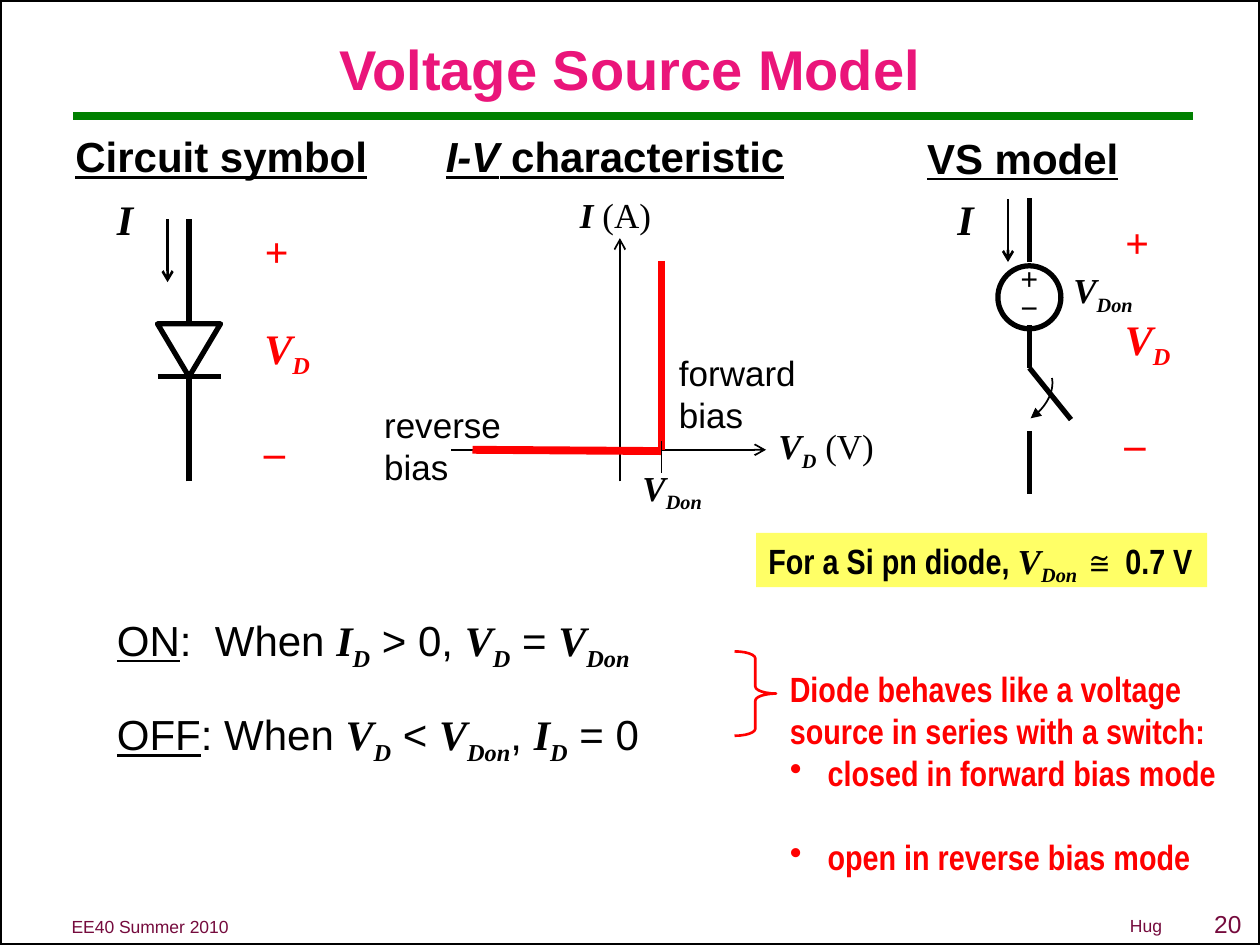
"""Build the voltage source model slide."""
import pptx
import pptx.dml.color
import pptx.enum.shapes
import pptx.enum.text
import pptx.oxml
import pptx.oxml.ns
import pptx.util

Inches, Pt = pptx.util.Inches, pptx.util.Pt
Shape = pptx.enum.shapes.MSO_SHAPE
Align = pptx.enum.text.PP_ALIGN
Anchor = pptx.enum.text.MSO_ANCHOR
Fit = pptx.enum.text.MSO_AUTO_SIZE

THEME = {
    "black": "000000", "red": "FF0000", "green": "008000", "pink": "EA157A",
    "plum": "750B3D", "yellow": "FFFF66",
    "sans": "Arial", "narrow": "Arial Narrow", "serif": "Times New Roman",
    "title": 32, "head": 24, "label": 20, "sign": 18, "page": 14, "foot": 10,
}
MATH = dict(font="serif", bold=True, italic=True)
SUB = dict(MATH, base=-25)
LINE = dict(underline=True)
ROMAN = dict(font="serif")


def sym(name, sub, tail=""):
    return [(name, MATH), (sub + tail, SUB)]


TITLE = "Voltage Source Model"
HEADS = [
    ((0.5, 0.99, 2.52, 0.5), [("Circuit symbol", LINE)]),
    ((3.44, 0.99, 2.89, 0.5), [("I-V", dict(LINE, italic=True)), (" characteristic", LINE)]),
    ((7.26, 1, 1.73, 0.5), [("VS model", LINE)]),
]
BIAS = [((2.95, 3.15, 1.71, 0.43), "reverse bias"), ((5.29, 2.74, 1.71, 0.43), "forward bias")]
MARKS = [
    ((6.08, 3.32, 1, 0.43), sym("V", "D") + [(" (V)", ROMAN)]),
    ((5, 3.65, 1, 0.43), sym("V", "Don")),
    ((8.42, 2.08, 1, 0.43), sym("V", "Don")),
]
AXIS = [("I ", MATH), ("(A)", ROMAN)]
DROP = [[("+", MATH)], sym("V", "D"), [("–", MATH)]]
DROPS = [(2, 1.74, 0.67, 2.1), (8.83, 1.67, 0.58, 2.1)]
FLOWS = [(0.83, 1.49, 0.33, 0.5), (7.5, 1.49, 0.33, 0.5)]
STATES = [
    [("ON", LINE), (":  When ", {}), *sym("I", "D"), (" > 0, ", {}),
     *sym("V", "D"), (" = ", {}), *sym("V", "Don")],
    [("OFF", LINE), (": When ", {}), *sym("V", "D"), (" < ", {}),
     *sym("V", "Don"), (", ", {}), *sym("I", "D"), (" = 0", {})],
]
NOTE = [("For a Si pn diode, ", {}), *sym("V", "Don", " "), ("≅ 0.7 V", {})]
SWITCH = [
    "Diode behaves like a voltage source in series with a switch:",
    "closed in forward bias mode",
    "open in reverse bias mode",
]
FOOT = [((0.47, 7.22, 1.46, 0.27), "EE40 Summer 2010"), ((8.87, 7.21, 0.46, 0.27), "Hug")]
PAGE = "20"

LINES = [
    (0.58, 0.92, 9.47, 0.92, "green", 4.5, None),
    (4.92, 3.82, 4.92, 1.89, "black", 1, "arrow"),
    (3.58, 3.57, 6.08, 3.57, "black", 1, "arrow"),
    (3.75, 3.57, 5.25, 3.58, "red", 4.5, None),
    (5.25, 2.07, 5.25, 3.57, "red", 4.5, None),
    (5.25, 3.5, 5.25, 3.75, "black", 1, None),
    (1.25, 2.99, 1.75, 2.99, "black", 3, None),
    (1.5, 2.57, 1.5, 1.74, "black", 3, None),
    (1.5, 3.82, 1.5, 2.99, "black", 3, None),
    (1.33, 1.74, 1.33, 2.24, "black", 1.5, "arrow"),
    (8.17, 2.08, 8.17, 1.57, "black", 3, None),
    (8.17, 2.92, 8.17, 2.58, "black", 3, None),
    (8.5, 3.33, 8.17, 2.92, "black", 3, None),
    (8.17, 3.92, 8.17, 3.42, "black", 3, None),
    (8, 1.58, 8, 2.08, "black", 1.5, "arrow"),
]
SHAPES = [
    (Shape.RECTANGLE, (0, 0, 10, 7.5), "black", 2.25, 0, []),
    (Shape.ISOSCELES_TRIANGLE, (1.25, 2.57, 0.5, 0.42), "black", 3, 180, [0.5]),
    (Shape.OVAL, (7.92, 2.11, 0.5, 0.5), "black", 3, 0, []),
    (Shape.RIGHT_BRACE, (5.83, 5.17, 0.33, 0.67), "red", 1.5, 0, [0.17, 0.5]),
]
SWING = [(8.35, 3), (8.37, 3.11), (8.3, 3.24), (8.18, 3.32)]


def tint(name):
    return pptx.dml.color.RGBColor.from_string(THEME[name])


def place(shape, box):
    shape.left, shape.top, shape.width, shape.height = map(Inches, box)


def text(slide, box, paras, shape=None, size="label", font="sans", color="black", bold=False,
         align=Align.LEFT, anchor=Anchor.TOP, wrap=True, fill=None, gaps=(), pitch=None,
         hang=0, dots=()):
    fresh = shape is None
    shape = shape or slide.shapes.add_textbox(0, 0, 0, 0)
    place(shape, box)
    if fill:
        shape.fill.solid()
        shape.fill.fore_color.rgb = tint(fill)
    frame = shape.text_frame
    frame.word_wrap, frame.vertical_anchor = wrap, anchor
    frame.auto_size = Fit.SHAPE_TO_FIT_TEXT if fresh else Fit.NONE
    for num, runs in enumerate(paras):
        para = frame.add_paragraph() if num else frame.paragraphs[0]
        para.alignment, para.line_spacing = align, pitch
        para.space_before = Pt(gaps[num] if gaps else 0)
        props = para._p.get_or_add_pPr()
        if hang and (num in dots or not dots):
            props.set("marL", str(Inches(hang)))
            props.set("indent", str(-Inches(hang)))
        if num in dots:
            pptx.oxml.ns.qn("a:buChar")
            props.append(pptx.oxml.parse_xml(
                f'<a:buChar {pptx.oxml.ns.nsdecls("a")} char="•"/>'))
        for words, style in [(runs, {})] if isinstance(runs, str) else runs:
            run = para.add_run()
            run.text = words
            face = run.font
            face.size, face.name = Pt(THEME[size]), THEME[style.get("font", font)]
            face.color.rgb = tint(color)
            face.bold = style.get("bold", bold)
            face.italic = style.get("italic", False)
            face.underline = style.get("underline", False)
            if "base" in style:
                run._r.get_or_add_rPr().set("baseline", str(style["base"] * 1000))


def stroke(shape, color, width, head=None):
    shape.line.color.rgb, shape.line.width = tint(color), Pt(width)
    if head:
        shape.line._get_or_add_ln().append(pptx.oxml.parse_xml(
            f'<a:tailEnd {pptx.oxml.ns.nsdecls("a")} type="{head}"/>'))


def wire(slide, x1, y1, x2, y2, color, width, head):
    line = slide.shapes.add_connector(
        pptx.enum.shapes.MSO_CONNECTOR.STRAIGHT, *map(Inches, (x1, y1, x2, y2)))
    stroke(line, color, width, head)
    line._element.spPr.append(pptx.oxml.parse_xml(
        f'<a:effectLst {pptx.oxml.ns.nsdecls("a")}/>'))


def outline(slide, kind, box, color, width, turn, bends):
    shape = slide.shapes.add_shape(kind, *map(Inches, box))
    shape.shadow.inherit = False
    shape.fill.background()
    shape.rotation = turn
    for num, bend in enumerate(bends):
        shape.adjustments[num] = bend
    stroke(shape, color, width)


def curve(slide, knots, steps=16):
    def point(t):
        parts = ((1 - t) ** 3, 3 * t * (1 - t) ** 2, 3 * t * t * (1 - t), t ** 3)
        return tuple(Inches(sum(p * k[axis] for p, k in zip(parts, knots))) for axis in (0, 1))

    first, *rest = [point(num / steps) for num in range(steps + 1)]
    pen = slide.shapes.build_freeform(*first, scale=1.0)
    pen.add_line_segments(rest, close=False)
    shape = pen.convert_to_shape()
    shape.shadow.inherit = False
    shape.fill.background()
    stroke(shape, "black", 1, "triangle")


def main():
    deck = pptx.Presentation()
    deck.slide_width, deck.slide_height = Inches(10), Inches(7.5)
    slide = deck.slides.add_slide(deck.slide_layouts[5])
    text(slide, (0.5, 0.25, 9, 0.58), [TITLE], shape=slide.shapes.title, size="title",
         color="pink", bold=True, align=Align.CENTER, anchor=Anchor.MIDDLE)
    for line in LINES:
        wire(slide, *line)
    for shape in SHAPES:
        outline(slide, *shape)
    curve(slide, SWING)
    for box, runs in HEADS:
        text(slide, box, [runs], size="head", bold=True, wrap=False)
    for box, words in BIAS:
        text(slide, box, [words], wrap=False)
    for box, runs in MARKS:
        text(slide, box, [runs])
    text(slide, (4.33, 1.49, 1.11, 0.43), [AXIS], align=Align.CENTER)
    for box in DROPS:
        text(slide, box, DROP, size="head", color="red", wrap=False, gaps=(0, 26.5, 26.5))
    for box in FLOWS:
        text(slide, box, [[("I", MATH)]], size="head", wrap=False)
    text(slide, (8, 2.08, 0.34, 0.55), ["+", "−"], size="sign", font="serif", bold=True,
         wrap=False, pitch=0.75)
    text(slide, (0.83, 4.83, 7.58, 1.21), STATES, size="head", gaps=(0, 21), hang=0.32)
    text(slide, (6.17, 5.25, 3.67, 1.43), SWITCH, font="narrow", color="red", bold=True,
         gaps=(0, 0, 24), hang=0.3, dots=(1, 2))
    text(slide, (6, 4.23, 3.58, 0.43), [NOTE], font="narrow", bold=True, fill="yellow")
    for box, words in FOOT:
        text(slide, box, [words], size="foot", color="plum", wrap=False)
    text(slide, (9.49, 7.16, 0.51, 0.34), [PAGE], size="page", color="plum",
         align=Align.CENTER, anchor=Anchor.MIDDLE)
    deck.save("out.pptx")


if __name__ == "__main__":
    main()
